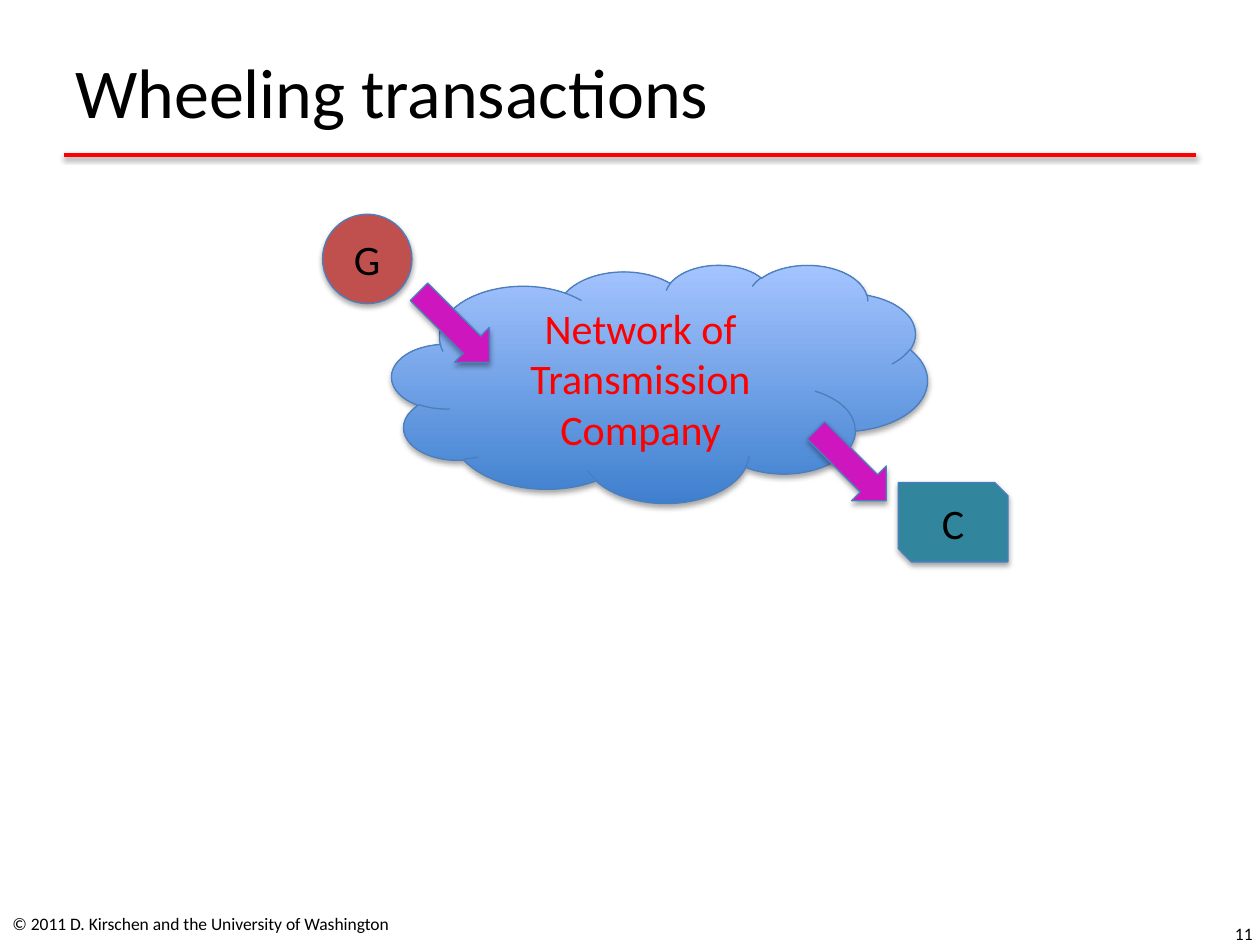
import pptx
import pptx.util
import pptx.dml.color
import pptx.enum.shapes
import pptx.enum.text
import pptx.oxml
import pptx.oxml.ns

COLUMNS, ROWS = 100, 75
SHAPE = pptx.enum.shapes.MSO_SHAPE
ALIGN = pptx.enum.text.PP_ALIGN
COLORS = {
    "text": "000000",
    "red": "FF0000",
    "outline": "4B7EBC",
    "cloud_bottom": "3F80CE",
    "cloud_top": "A4C4FF",
    "generator": "C0504D",
    "consumer": "31859C",
    "arrow": "CE16BE",
}

prs = pptx.Presentation()
prs.slide_width = pptx.util.Inches(10)
prs.slide_height = pptx.util.Inches(7.5)


def color(name):
    return pptx.dml.color.RGBColor.from_string(COLORS[name])


def grid(x, y):
    """Turn grid columns and rows into slide lengths."""
    return int(x * prs.slide_width / COLUMNS), int(y * prs.slide_height / ROWS)


def add_shadow(s, alpha, dist):
    """Give a shape or connector a soft shadow straight below it."""
    s._element.spPr.append(pptx.oxml.parse_xml(
        f'<a:effectLst {pptx.oxml.ns.nsdecls("a")}>'
        f'<a:outerShdw blurRad="40000" dist="{dist}" dir="5400000" rotWithShape="0">'
        f'<a:srgbClr val="000000"><a:alpha val="{alpha * 1000}"/></a:srgbClr>'
        '</a:outerShdw></a:effectLst>'))


def write(s, text, size=24, fill="text", align=ALIGN.CENTER):
    tf = s.text_frame
    tf.word_wrap = True
    tf.vertical_anchor = pptx.enum.text.MSO_ANCHOR.MIDDLE
    p = tf.paragraphs[0]
    p.alignment = align
    r = p.add_run()
    r.text = text
    r.font.name = "Calibri"
    r.font.size = pptx.util.Pt(size)
    r.font.color.rgb = color(fill)


def add_text(slide, x, y, w, h, text, **fmt):
    write(slide.shapes.add_textbox(*grid(x, y), *grid(w, h)), text, **fmt)


def add_shape(slide, kind, x, y, w, h, *fills, rotation=0):
    """Draw an outlined shape; two fills make a gradient from the bottom up."""
    s = slide.shapes.add_shape(kind, *grid(x, y), *grid(w, h))
    s.rotation = rotation
    if len(fills) == 2:
        s.fill.gradient()
        s.fill.gradient_angle = 90
        for stop, position, name in zip(s.fill.gradient_stops, (0, 1), fills):
            stop.position = position
            stop.color.rgb = color(name)
    else:
        s.fill.solid()
        s.fill.fore_color.rgb = color(fills[0])
    s.line.color.rgb = color("outline")
    s.line.width = pptx.util.Pt(0.75)
    add_shadow(s, alpha=35, dist=23000)
    return s


def add_rule(slide, x1, x2, y):
    s = slide.shapes.add_connector(
        pptx.enum.shapes.MSO_CONNECTOR.STRAIGHT, *grid(x1, y), *grid(x2, y))
    s.line.color.rgb = color("red")
    s.line.width = pptx.util.Pt(2)
    add_shadow(s, alpha=38, dist=20000)


def main():
    slide = prs.slides.add_slide(prs.slide_layouts[6])

    # Title, rule and footer
    add_rule(slide, 5.1, 94.9, 12.3)
    add_text(slide, 5, 1.3, 90, 11.7, "Wheeling transactions",
             size=40, align=ALIGN.LEFT)
    add_text(slide, 0, 71.3, 32.7, 4,
             "© 2011 D. Kirschen and the University of Washington",
             size=10, align=ALIGN.LEFT)
    add_text(slide, 77.1, 72.1, 23.3, 4, "11", size=10, align=ALIGN.RIGHT)

    # Network between generator and consumer
    network = add_shape(slide, SHAPE.CLOUD, 31.1, 21, 42.5, 18.9,
                        "cloud_bottom", "cloud_top")
    write(network, "Network of Transmission Company", fill="red")
    generator = add_shape(slide, SHAPE.OVAL, 25.6, 17, 7.1, 7.1, "generator")
    write(generator, "G")
    consumer = add_shape(slide, SHAPE.SNIP_2_DIAG_RECTANGLE,
                         71.3, 38.3, 8.7, 6.3, "consumer")
    write(consumer, "C")

    # Power flowing in and out
    for x, y in ((32.1, 24), (63.6, 35)):
        add_shape(slide, SHAPE.RIGHT_ARROW, x, y, 7.9, 3.9, "arrow", rotation=45)

    prs.save("out.pptx")


if __name__ == "__main__":
    main()
